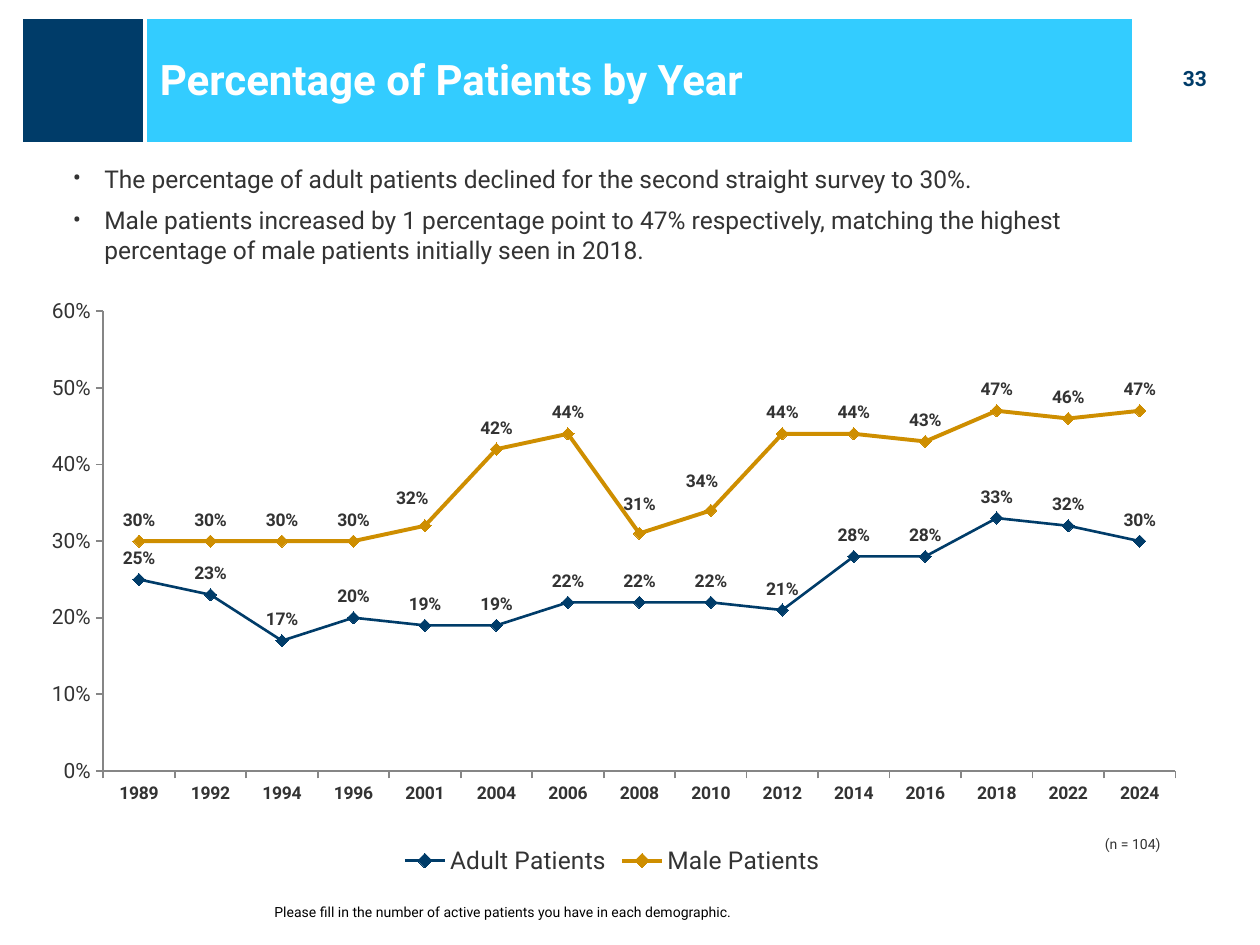
from dataclasses import dataclass, field

from lxml.etree import SubElement
from pptx import Presentation
from pptx.chart.data import CategoryChartData
from pptx.dml.color import RGBColor
from pptx.enum.chart import XL_CHART_TYPE, XL_LABEL_POSITION, XL_LEGEND_POSITION
from pptx.enum.chart import XL_MARKER_STYLE, XL_TICK_MARK
from pptx.enum.shapes import MSO_SHAPE
from pptx.enum.text import MSO_ANCHOR, PP_ALIGN
from pptx.oxml import parse_xml
from pptx.oxml.ns import nsdecls, qn
from pptx.util import Inches, Pt

FONT = "Roboto"
NAVY, SKY, GOLD = "003C69", "33CCFF", "CE8E00"
WHITE, BLACK, TEXT, AXIS = "FFFFFF", "000000", "333333", "868686"
CHART_WIDTH, CHART_HEIGHT = 9.44, 4.74


@dataclass
class Block:
    left: float
    width: float
    color: str


@dataclass
class TextItem:
    box: tuple[float, float, float, float]
    lines: list[str]
    size: float
    color: str = TEXT
    bold: bool = False
    bullet: bool = False
    formats: dict = field(default_factory=dict)
    align: PP_ALIGN = PP_ALIGN.LEFT


@dataclass
class Trend:
    name: str
    percents: list[int]
    color: str
    width: float
    label_shifts: dict[int, tuple[float, float]] = field(default_factory=dict)


BLOCKS = [Block(1, 8, SKY), Block(0.17, 0.98, NAVY)]

TEXTS = [
    TextItem((9.14, 0.47, 0.73, 0.3), ["33 "], 12, NAVY, bold=True, align=PP_ALIGN.CENTER),
    TextItem((0.48, 1.25, 8.5, 0.93), [
        "The percentage of adult patients declined for the second straight survey to 30%.",
        "Male patients increased by 1 percentage point to 47% respectively, matching the "
        "highest percentage of male patients initially seen in 2018.",
    ], 14, bullet=True),
    TextItem((1.17, 0.25, 8.58, 0.75), ["Percentage of Patients by Year"], 24, WHITE,
             bold=True, formats={"vertical_anchor": MSO_ANCHOR.MIDDLE}),
    TextItem((8.67, 6.58, 0.75, 0.24), ["(n = 104)"], 8),
    TextItem((2.08, 7.12, 6.33, 0.24),
             ["Please fill in the number of active patients you have in each demographic."],
             8, BLACK),
]

YEARS = ["1989", "1992", "1994", "1996", "2001", "2004", "2006", "2008",
         "2010", "2012", "2014", "2016", "2018", "2022", "2024"]
# Label shifts are in inches, across and down
TRENDS = [
    Trend("Adult Patients",
          [25, 23, 17, 20, 19, 19, 22, 22, 22, 21, 28, 28, 33, 32, 30], NAVY, 1.5),
    Trend("Male Patients",
          [30, 30, 30, 30, 32, 42, 44, 31, 34, 44, 44, 43, 47, 46, 47], GOLD, 2.25,
          {4: (-0.1, -0.05), 7: (0, -0.06), 8: (-0.07, -0.06)}),
]


def rgb(value: str) -> RGBColor:
    return RGBColor.from_string(value)


def set_font(font, size: float, color: str = TEXT, bold: bool = False) -> None:
    for name, value in {"name": FONT, "size": Pt(size), "bold": bold}.items():
        setattr(font, name, value)
    font.color.rgb = rgb(color)


def add_block(slide, block: Block) -> None:
    shape = slide.shapes.add_shape(MSO_SHAPE.RECTANGLE, Inches(block.left), Inches(0.14),
                                   Inches(block.width), Inches(1))
    shape.shadow.inherit = False
    shape.fill.solid()
    shape.fill.fore_color.rgb = rgb(block.color)
    shape.line.color.rgb = rgb(WHITE)
    shape.line.width = Pt(2)


def add_bullet(paragraph) -> None:
    properties = paragraph._p.get_or_add_pPr()
    properties.set("marL", str(Inches(0.25)))
    properties.set("indent", str(Inches(-0.25)))
    SubElement(properties, qn("a:buFont")).set("typeface", FONT)
    SubElement(properties, qn("a:buChar")).set("char", "•")


def add_text(slide, item: TextItem) -> None:
    frame = slide.shapes.add_textbox(*map(Inches, item.box)).text_frame
    for name, value in {"word_wrap": True, **item.formats}.items():
        setattr(frame, name, value)
    for index, line in enumerate(item.lines):
        paragraph = frame.add_paragraph() if index else frame.paragraphs[0]
        if index:
            paragraph.space_before = Pt(7)
        paragraph.alignment = item.align
        if item.bullet:
            add_bullet(paragraph)
        run = paragraph.add_run()
        run.text = line
        set_font(run.font, item.size, item.color, item.bold)


def manual_layout(modes: dict[str, str], lengths: dict[str, float]):
    """Build a chart layout element, turning inches into shares of the chart."""
    sides = {"x": CHART_WIDTH, "y": CHART_HEIGHT, "w": CHART_WIDTH, "h": CHART_HEIGHT}
    values = modes | {name: length / sides[name] for name, length in lengths.items()}
    settings = "".join(f'<c:{name} val="{value}"/>' for name, value in values.items())
    return parse_xml(f"<c:layout {nsdecls('c')}><c:manualLayout>{settings}"
                     "</c:manualLayout></c:layout>")


def style_axis(axis, size: float, bold: bool) -> None:
    formats = {"has_major_gridlines": False, "major_tick_mark": XL_TICK_MARK.OUTSIDE,
               "minor_tick_mark": XL_TICK_MARK.NONE}
    for name, value in formats.items():
        setattr(axis, name, value)
    axis.format.line.color.rgb = rgb(AXIS)
    axis.format.line.width = Pt(1)
    set_font(axis.tick_labels.font, size, bold=bold)


def style_series(series, trend: Trend) -> None:
    series.smooth = False
    series.format.line.color.rgb = rgb(trend.color)
    series.format.line.width = Pt(trend.width)
    marker = series.marker
    marker.style = XL_MARKER_STYLE.DIAMOND
    marker.size = 7
    marker.format.fill.solid()
    marker.format.fill.fore_color.rgb = rgb(trend.color)
    marker.format.line.color.rgb = rgb(trend.color)

    labels = series.data_labels
    formats = {"show_value": True, "position": XL_LABEL_POSITION.ABOVE,
               "number_format": "0%", "number_format_is_linked": False}
    for name, value in formats.items():
        setattr(labels, name, value)
    set_font(labels.font, 10, bold=True)

    # Labels moved clear of the line
    for index, (across, down) in trend.label_shifts.items():
        label = series.points[index].data_label
        set_font(label.font, 10, bold=True)
        label.position = XL_LABEL_POSITION.ABOVE
        mark = labels._element.find(f"{qn('c:dLbl')}/{qn('c:idx')}[@val='{index}']")
        mark.addnext(manual_layout({}, {"x": across, "y": down}))


def add_trend_chart(slide) -> None:
    data = CategoryChartData(number_format="0%")
    data.categories = YEARS
    for trend in TRENDS:
        data.add_series(trend.name, [percent / 100 for percent in trend.percents])
    chart = slide.shapes.add_chart(XL_CHART_TYPE.LINE_MARKERS, Inches(0.14), Inches(2.25),
                                   Inches(CHART_WIDTH), Inches(CHART_HEIGHT), data).chart
    chart.has_title = False
    set_font(chart.font, 18)

    # Axes
    style_axis(chart.category_axis, 10, bold=True)
    style_axis(chart.value_axis, 12, bold=False)
    for name, value in {"minimum_scale": 0, "maximum_scale": 0.6, "major_unit": 0.1}.items():
        setattr(chart.value_axis, name, value)
    chart.value_axis.tick_labels.number_format = "0%"
    chart.value_axis.tick_labels.number_format_is_linked = False

    # Legend
    chart.has_legend = True
    chart.legend.position = XL_LEGEND_POSITION.BOTTOM
    chart.legend.include_in_layout = False
    set_font(chart.legend.font, 14)

    # Lines and plot area
    chart.plots[0].vary_by_categories = False
    for series, trend in zip(chart.plots[0].series, TRENDS):
        style_series(series, trend)
    plot_area = chart.element.find(f".//{qn('c:plotArea')}")
    for layout in plot_area.findall(qn("c:layout")):
        plot_area.remove(layout)
    modes = {"layoutTarget": "inner", "xMode": "edge", "yMode": "edge"}
    plot_area.insert(0, manual_layout(modes, {"x": 0.68, "y": 0.22, "w": 8.51, "h": 3.65}))


def main() -> None:
    presentation = Presentation()
    presentation.slide_width, presentation.slide_height = Inches(10), Inches(7.5)
    slide = presentation.slides.add_slide(presentation.slide_layouts[6])
    for block in BLOCKS:
        add_block(slide, block)
    add_trend_chart(slide)
    for item in TEXTS:
        add_text(slide, item)
    presentation.save("out.pptx")


if __name__ == "__main__":
    main()
